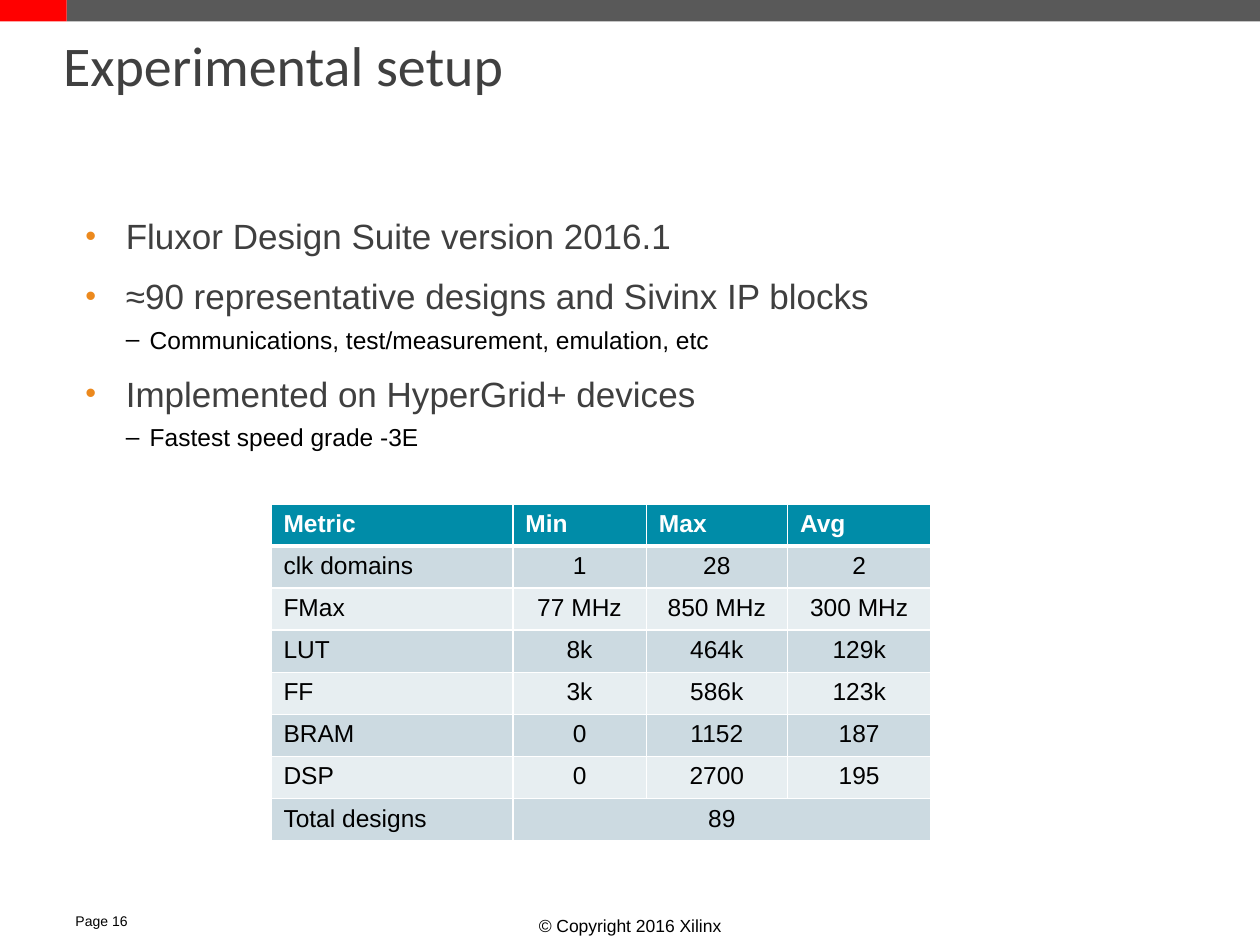
import pptx
import pptx.util
import pptx.dml.color
import pptx.enum.shapes
import pptx.enum.text
import pptx.oxml
import pptx.oxml.ns

Inches, Pt = pptx.util.Inches, pptx.util.Pt
ALIGN = pptx.enum.text.PP_ALIGN
COLORS = {
    "red": "FF0000", "bar": "595959", "title": "404040", "body": "3F3F3F",
    "bullet": "EC891D", "black": "000000", "white": "FFFFFF",
    "header": "008CA8", "odd row": "CCDAE1", "even row": "E7EEF1",
}
NAMESPACE = pptx.oxml.ns.nsdecls("a")


def rgb(name):
    return pptx.dml.color.RGBColor.from_string(COLORS[name])


def style(paragraph, size, color, font="Arial", bold=False):
    paragraph.font.size = Pt(size)
    paragraph.font.name = font
    paragraph.font.bold = bold
    paragraph.font.color.rgb = rgb(color)


presentation = pptx.Presentation()
presentation.slide_width, presentation.slide_height = Inches(10), Inches(7.5)
slide = presentation.slides.add_slide(presentation.slide_layouts[5])

# Band along the top edge
for left, width, color in [(0.53, 9.47, "bar"), (0, 0.53, "red")]:
    band = slide.shapes.add_shape(
        pptx.enum.shapes.MSO_SHAPE.RECTANGLE, Inches(left), 0, Inches(width), Inches(0.17))
    band.shadow.inherit = False
    band.fill.solid()
    band.fill.fore_color.rgb = rgb(color)
    band.line.fill.background()

# Title
title = slide.shapes.title
title.left, title.top, title.width, title.height = map(Inches, (0.5, 0.23, 9, 0.6))
title.text_frame.text = "Experimental setup"
title.text_frame.margin_left = 0
title.text_frame.vertical_anchor = pptx.enum.text.MSO_ANCHOR.MIDDLE
title.text_frame.auto_size = pptx.enum.text.MSO_AUTO_SIZE.NONE
title_paragraph = title.text_frame.paragraphs[0]
title_paragraph.alignment = ALIGN.LEFT
title_paragraph.line_spacing = 0.98
style(title_paragraph, 32, "title", "Calibri")

# Bulleted list
LEVELS = [
    {"left": 0.32, "indent": -0.32, "mark": "•", "mark color": "bullet", "mark size": 88,
     "size": 20, "color": "body", "before": 8},
    {"left": 0.51, "indent": -0.19, "mark": "–", "mark color": "black", "mark size": 100,
     "size": 14, "color": "black", "before": 2.8},
]
BULLETS = [
    (0, "Fluxor Design Suite version 2016.1"),
    (0, "≈90 representative designs and Sivinx IP blocks"),
    (1, "Communications, test/measurement, emulation, etc"),
    (0, "Implemented on HyperGrid+ devices"),
    (1, "Fastest speed grade -3E"),
]
body = slide.shapes.add_textbox(*map(Inches, (0.58, 1.62, 7.05, 2.12))).text_frame
body.word_wrap = True
for index, (depth, text) in enumerate(BULLETS):
    level = LEVELS[depth]
    paragraph = body.add_paragraph() if index else body.paragraphs[0]
    paragraph.text = text
    paragraph.level = depth
    paragraph.line_spacing = 1.1
    paragraph.space_before = Pt(level["before"] if index else 0)
    properties = paragraph._p.get_or_add_pPr()
    properties.set("marL", str(Inches(level["left"])))
    properties.set("indent", str(Inches(level["indent"])))
    for xml in (
        f'<a:buClr {NAMESPACE}><a:srgbClr val="{COLORS[level["mark color"]]}"/></a:buClr>',
        f'<a:buSzPct {NAMESPACE} val="{level["mark size"] * 1000}"/>',
        f'<a:buFont {NAMESPACE} typeface="Arial"/>',
        f'<a:buChar {NAMESPACE} char="{level["mark"]}"/>',
    ):
        properties.append(pptx.oxml.parse_xml(xml))
    style(paragraph, level["size"], level["color"])

# Table of design metrics
ROWS = [
    ("Metric", "Min", "Max", "Avg"),
    ("clk domains", "1", "28", "2"),
    ("FMax", "77 MHz", "850 MHz", "300 MHz"),
    ("LUT", "8k", "464k", "129k"),
    ("FF", "3k", "586k", "123k"),
    ("BRAM", "0", "1152", "187"),
    ("DSP", "0", "2700", "195"),
    ("Total designs", "89", "", ""),
]
COLUMN_WIDTHS = [1.92, 1.06, 1.12, 1.14]
ROW_HEIGHT = 0.32
table = slide.shapes.add_table(
    len(ROWS), len(COLUMN_WIDTHS), Inches(2.15), Inches(4),
    Inches(sum(COLUMN_WIDTHS)), Inches(ROW_HEIGHT * len(ROWS))).table
for column, width in zip(table.columns, COLUMN_WIDTHS):
    column.width = Inches(width)
for row_index, values in enumerate(ROWS):
    table.rows[row_index].height = Inches(ROW_HEIGHT)
    is_header = row_index == 0
    fill = "header" if is_header else "odd row" if row_index % 2 else "even row"
    for column_index, value in enumerate(values):
        cell = table.cell(row_index, column_index)
        cell.text = value
        cell.fill.solid()
        cell.fill.fore_color.rgb = rgb(fill)
        paragraph = cell.text_frame.paragraphs[0]
        paragraph.alignment = ALIGN.LEFT if is_header or column_index == 0 else ALIGN.CENTER
        style(paragraph, 14, "white" if is_header else "black", bold=is_header)
        for position, side in enumerate("LRTB"):
            thick = (row_index, side) in [(0, "B"), (1, "T")]
            border = pptx.oxml.parse_xml(
                f'<a:ln{side} {NAMESPACE} w="{Pt(3 if thick else 1)}"><a:solidFill>'
                f'<a:srgbClr val="{COLORS["white"]}"/></a:solidFill></a:ln{side}>')
            cell._tc.get_or_add_tcPr().insert(position, border)
last_row = len(ROWS) - 1
table.cell(last_row, 1).merge(table.cell(last_row, 3))

# Footer
for box, text, size, alignment in [
    ((0.5, 7.19, 0.92, 0.27), "Page 16", 8, ALIGN.LEFT),
    ((0, 7.21, 10, 0.29), "© Copyright 2016 Xilinx", 10, ALIGN.CENTER),
]:
    footer = slide.shapes.add_textbox(*map(Inches, box)).text_frame
    footer.word_wrap = True
    footer.text = text
    footer.paragraphs[0].alignment = alignment
    style(footer.paragraphs[0], size, "black")

presentation.save("out.pptx")
